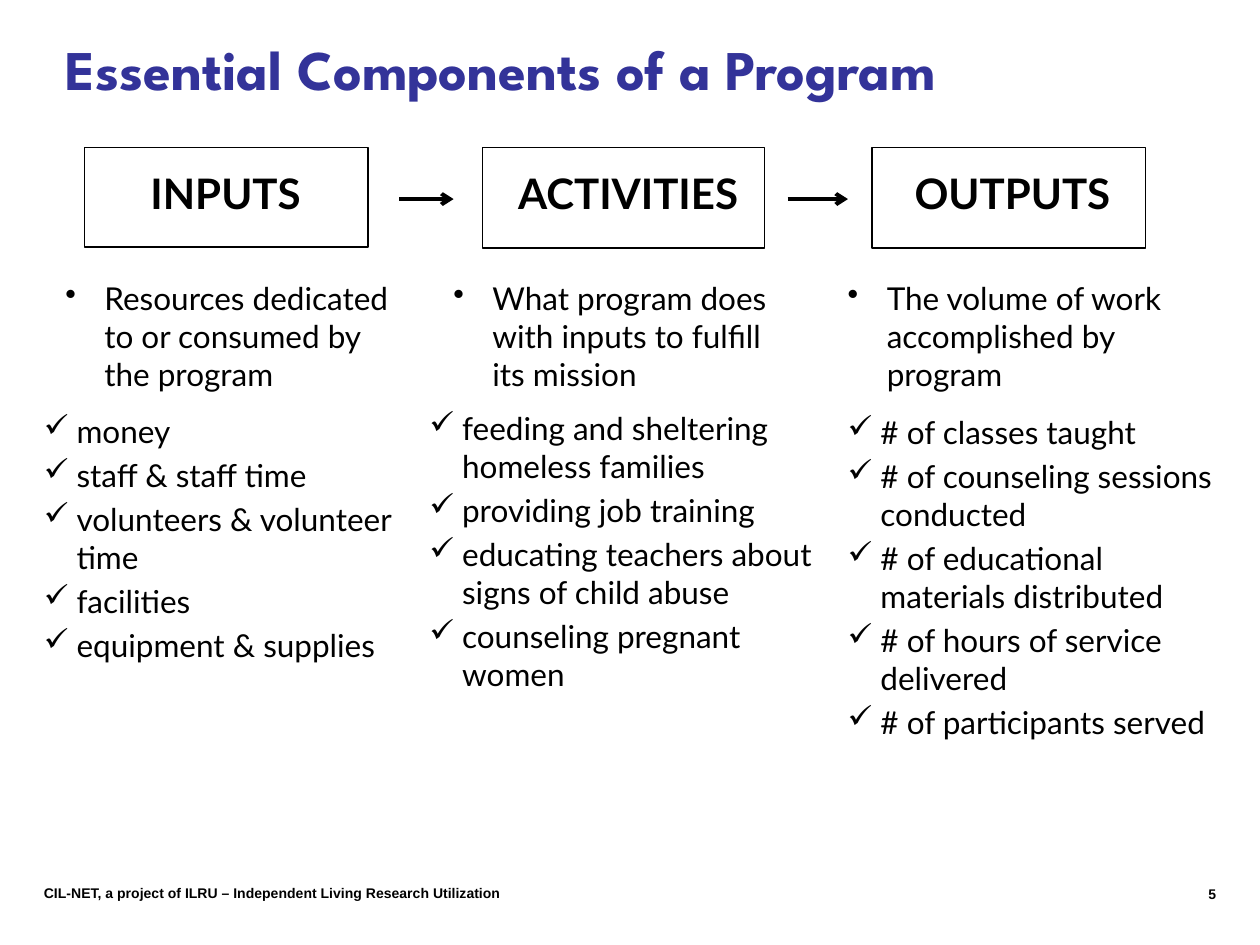
import pptx
import pptx.util
import pptx.dml.color
import pptx.enum.shapes
import pptx.enum.text
import pptx.oxml
import pptx.oxml.ns

Inches, Pt = pptx.util.Inches, pptx.util.Pt
Align = pptx.enum.text.PP_ALIGN
Anchor = pptx.enum.text.MSO_ANCHOR
COLORS = {"ink": "000000", "title": "333399"}

# label, label box, frame, definition box, definition, list box, items
COLUMNS = [
    ("INPUTS", (1.03, 1.36, 1.52, 0.42), (0.67, 1.17, 2.25, 0.79),
     (0.42, 2.16, 2.89, 1.01),
     "Resources dedicated to or consumed by the program",
     (0.25, 3.22, 2.97, 2.16),
     ["money", "staff & staff time", "volunteers & volunteer time",
      "facilities", "equipment & supplies"]),
    ("ACTIVITIES", (3.88, 1.36, 2.21, 0.42), (3.83, 1.17, 2.24, 0.8),
     (3.5, 2.16, 2.75, 1.01),
     "What program does with inputs to fulfill its mission",
     (3.31, 3.2, 3.36, 2.4),
     ["feeding and sheltering homeless families", "providing job training",
      "educating teachers about signs of child abuse",
      "counseling pregnant women"]),
    ("OUTPUTS", (7.13, 1.36, 1.81, 0.42), (6.92, 1.17, 2.17, 0.8),
     (6.63, 2.16, 3.2, 1.01),
     "The volume of work accomplished by program",
     (6.63, 3.23, 3.2, 2.77),
     ["# of classes taught", "# of counseling sessions conducted",
      "# of educational materials distributed",
      "# of hours of service delivered", "# of participants served"]),
]
ARROWS = [(3.17, 3.6), (6.25, 6.73)]
ARROW_Y = 1.58


def rgb(name):
    return pptx.dml.color.RGBColor.from_string(COLORS[name])


def child(parent, tag, **attrs):
    node = pptx.oxml.parse_xml(f"<a:{tag} {pptx.oxml.ns.nsdecls('a')}/>")
    for key, value in attrs.items():
        node.set(key, value)
    parent.append(node)


class Deck:
    body, small = "Lato", "Arial"

    def __init__(self):
        self.prs = pptx.Presentation()
        self.prs.slide_width, self.prs.slide_height = Inches(10), Inches(7.5)
        self.slide = self.prs.slides.add_slide(self.prs.slide_layouts[5])
        self.shapes = self.slide.shapes

    def style(self, para, size, face, bold=False, color="ink", align=Align.LEFT):
        para.alignment = align
        font = para.font
        font.size, font.name, font.bold = Pt(size), face, bold
        font.color.rgb = rgb(color)

    def title(self, text, box):
        shape = self.shapes.title
        shape.left, shape.top, shape.width, shape.height = map(Inches, box)
        frame = shape.text_frame
        frame.text = text
        frame.vertical_anchor = Anchor.MIDDLE
        frame.auto_size = pptx.enum.text.MSO_AUTO_SIZE.NONE
        self.style(frame.paragraphs[0], 32, "League Spartan", True, "title")

    def frame(self, box, anchor=Anchor.TOP, wrap=True):
        frame = self.shapes.add_textbox(*map(Inches, box)).text_frame
        frame.word_wrap, frame.vertical_anchor = wrap, anchor
        return frame

    def note(self, text, box, align=Align.LEFT):
        para = self.frame(box).paragraphs[0]
        para.text = text
        self.style(para, 8, self.small, True, align=align)

    def label(self, text, box):
        para = self.frame(box, Anchor.MIDDLE, False).paragraphs[0]
        para.text = text
        para.line_spacing = 0.8
        self.style(para, 24, self.body, True, align=Align.CENTER)

    def bullets(self, items, box, mark, indent, after, anchor=Anchor.TOP):
        frame = self.frame(box, anchor)
        for i, item in enumerate(items):
            para = frame.add_paragraph() if i else frame.paragraphs[0]
            para.text = item
            para.space_after = Pt(after)
            props = para._p.get_or_add_pPr()
            props.set("marL", str(Inches(indent)))
            props.set("indent", str(-Inches(indent)))
            child(props, "buChar", char=mark)
            self.style(para, 18, self.body)

    def outline(self, box):
        shape = self.shapes.add_shape(
            pptx.enum.shapes.MSO_SHAPE.RECTANGLE, *map(Inches, box))
        shape.shadow.inherit = False
        shape.fill.background()
        shape.line.color.rgb = rgb("ink")
        shape.line.width = Pt(0.75)

    def arrow(self, start, end, y):
        line = self.shapes.add_connector(
            pptx.enum.shapes.MSO_CONNECTOR.STRAIGHT,
            *map(Inches, (start, y, end, y)))
        line.line.color.rgb = rgb("ink")
        line.line.width = Pt(2.25)
        child(line.line._get_or_add_ln(), "tailEnd", type="arrow")
        child(line._element.spPr, "effectLst")


def main():
    deck = Deck()
    deck.title("Essential Components of a Program", (0.42, 0.22, 8.25, 0.64))
    for name, spot, border, about, text, area, items in COLUMNS:
        deck.label(name, spot)
        deck.outline(border)
        deck.bullets([text], about, "•", 0.31, 1.8, Anchor.MIDDLE)
        deck.bullets(items, area, "✓", 0.26, 3.6)
    for start, end in ARROWS:
        deck.arrow(start, end, ARROW_Y)
    deck.note("CIL-NET, a project of ILRU – Independent Living Research Utilization",
              (0.25, 6.97, 5, 0.23))
    deck.note("5", (9.08, 6.98, 0.67, 0.27), Align.RIGHT)
    deck.prs.save("out.pptx")


if __name__ == "__main__":
    main()
